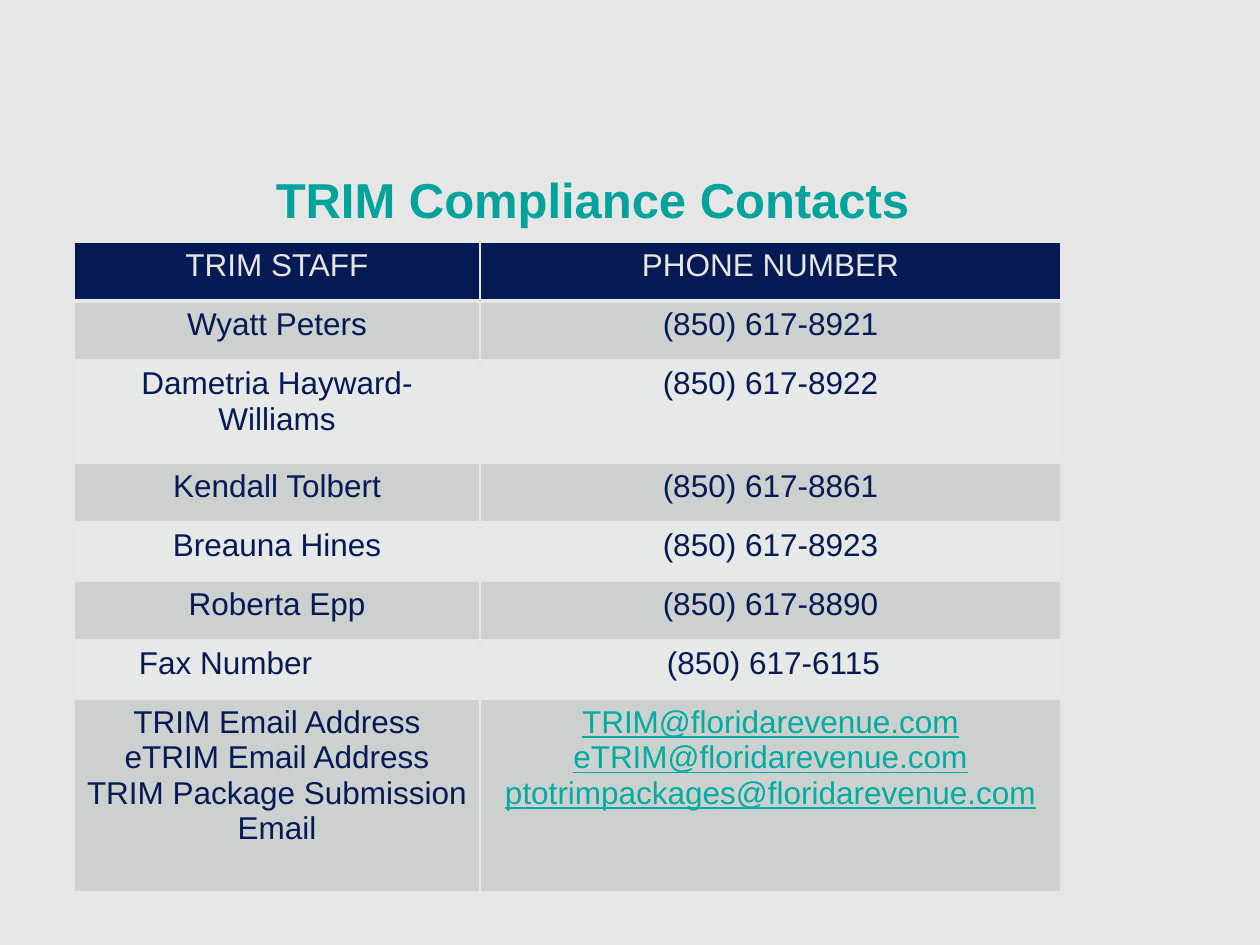
"""Build the TRIM compliance contacts slide."""
from lxml.etree import SubElement
from pptx import Presentation
from pptx.dml.color import RGBColor
from pptx.enum.text import MSO_ANCHOR as Anchor, PP_ALIGN as Align
from pptx.oxml.ns import qn
from pptx.util import Pt

PX = 914400 / 126
HUE = {"back": "E6E6E6", "navy": "051A54", "teal": "00A39B",
       "link": "00ACA1", "dark": "CCD1D0", "pale": "E7E9E9"}
TITLE = "TRIM Compliance Contacts"
ROWS = [
    (["TRIM STAFF"], ["PHONE NUMBER"]),
    (["Wyatt Peters"], ["(850) 617-8921"]),
    (["Dametria Hayward-Williams"], ["(850) 617-8922"]),
    (["Kendall Tolbert"], ["(850) 617-8861"]),
    (["Breauna Hines"], ["(850) 617-8923"]),
    (["Roberta Epp"], ["(850) 617-8890"]),
    (["Fax Number"], ["(850) 617-6115"]),
    (["TRIM Email Address", "eTRIM Email Address",
      "TRIM Package Submission Email"],
     ["TRIM@floridarevenue.com", "eTRIM@floridarevenue.com",
      "ptotrimpackages@floridarevenue.com"]),
]
WIDE = [406, 581]
HIGH = [59, 59, 103, 59, 59, 59, 59, 193]
FAX = 6
INSET = [65, 187]


def px(n):
    return round(n * PX)


def rgb(key):
    return RGBColor.from_string(HUE[key])


def write(frame, lines, size, key, align=Align.CENTER, bold=False, line=False):
    for i, text in enumerate(lines):
        para = frame.paragraphs[0] if i == 0 else frame.add_paragraph()
        para.alignment = align
        run = para.add_run()
        run.text = text
        font = run.font
        font.name, font.size, font.bold = "Arial", Pt(size), bold
        font.underline = line
        font.color.rgb = rgb(key)


def edge(cell, head):
    props = cell._tc.get_or_add_tcPr()
    for side in "LRTB":
        width = Pt(3 if head and side == "B" else 1)
        ln = SubElement(props, qn("a:ln" + side), w=str(width))
        fill = SubElement(ln, qn("a:solidFill"))
        SubElement(fill, qn("a:srgbClr"), val=HUE["back"])


def main():
    deck = Presentation()
    deck.slide_width, deck.slide_height = px(1260), px(945)
    slide = deck.slides.add_slide(deck.slide_layouts[6])
    slide.background.fill.solid()
    slide.background.fill.fore_color.rgb = rgb("back")

    box = slide.shapes.add_textbox(px(99), px(159), px(987), px(79))
    box.text_frame.word_wrap = True
    box.text_frame.vertical_anchor = Anchor.MIDDLE
    write(box.text_frame, [TITLE], 28, "teal", bold=True)

    table = slide.shapes.add_table(
        len(ROWS), len(WIDE), px(74), px(242), px(sum(WIDE)), px(sum(HIGH))).table
    for col, wide in zip(table.columns, WIDE):
        col.width = px(wide)
    for r, row in enumerate(ROWS):
        table.rows[r].height = px(HIGH[r])
        shade = "navy" if r == 0 else "dark" if r % 2 else "pale"
        for c, lines in enumerate(row):
            cell = table.cell(r, c)
            edge(cell, r == 0)
            cell.fill.solid()
            cell.fill.fore_color.rgb = rgb(shade)
            mail = "@" in lines[0]
            key = "back" if r == 0 else "link" if mail else "navy"
            align = Align.CENTER
            if r == FAX:
                align = Align.LEFT
                cell.margin_left = px(INSET[c])
            write(cell.text_frame, lines, 18, key, align, line=mail)
    deck.save("out.pptx")


if __name__ == "__main__":
    main()
